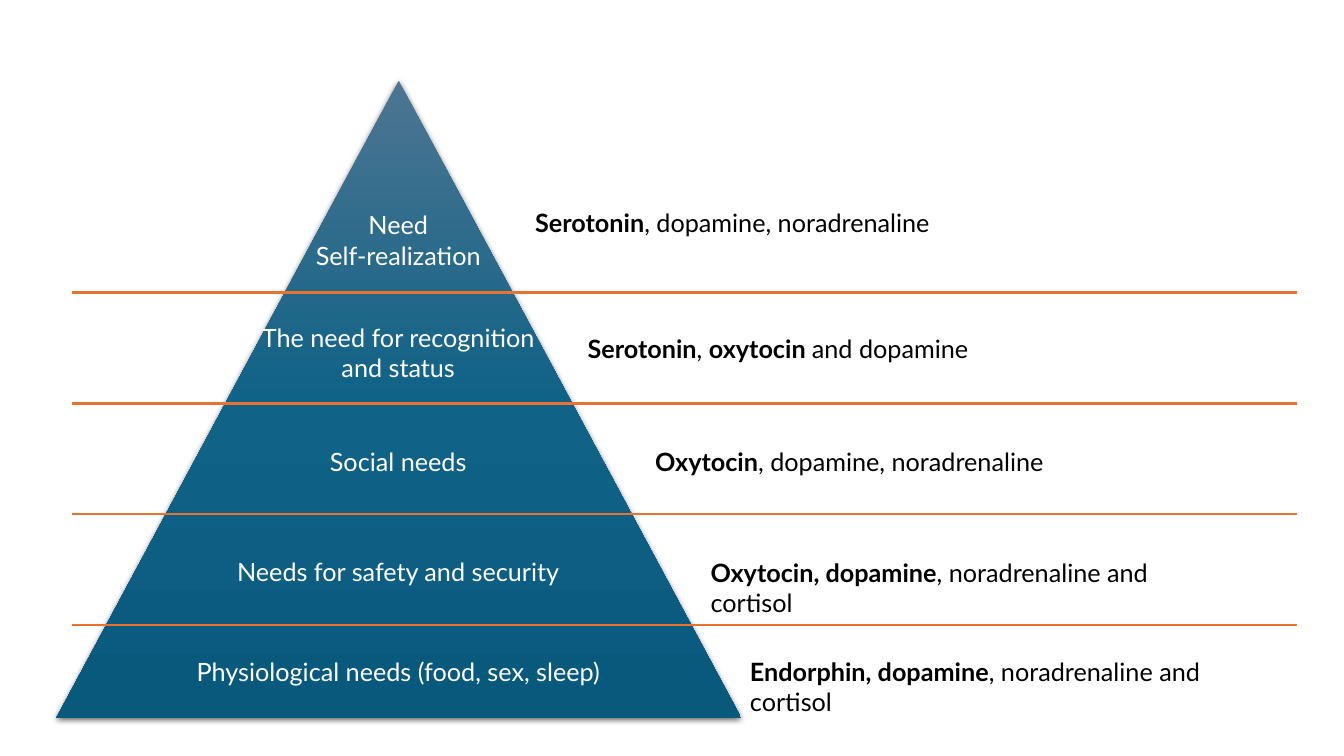
from copy import deepcopy
from dataclasses import dataclass

from lxml.etree import SubElement
from pptx import Presentation
from pptx.dml.color import RGBColor
from pptx.enum.shapes import MSO_CONNECTOR as Connector, MSO_SHAPE as Shape
from pptx.enum.text import MSO_AUTO_SIZE as AutoSize, PP_ALIGN as Align
from pptx.oxml.ns import qn
from pptx.util import Inches, Pt


@dataclass(frozen=True)
class Theme:
    font: str = "Lato"
    size: int = 18
    need: str = "FFFFFF"
    hormone: str = "000000"
    divider: str = "E97132"
    shadow: str = "000000"
    pyramid: tuple = ((0, "4C7591"), (0.5, "106287"), (1, "09597D"))


THEME = Theme()
PYRAMID_CENTER = 3.95
DIVIDER_LEFT, DIVIDER_RIGHT = 0.71, 12.86
DIVIDER_TOP, DIVIDER_STEP, DIVIDER_COUNT = 2.9, 1.1, 4

# Need lines, top, width, height
NEEDS = [
    (["Need", "Self-realization"], 2.03, 4.26, 0.71),
    (["The need for recognition", "and status"], 3.15, 4.26, 0.71),
    (["Social needs"], 4.38, 4.26, 0.4),
    (["Needs for safety and security"], 5.47, 4.26, 0.4),
    (["Physiological needs (food, sex, sleep)"], 6.46, 4.69, 0.4),
]

# Runs alternating bold and regular, left, top, width
HORMONES = [
    (["Serotonin", ", dopamine, noradrenaline"], 5.21, 2.01, 4.26),
    (["Serotonin", ", ", "oxytocin ", "and dopamine"], 5.73, 3.26, 4.26),
    (["Oxytocin", ", dopamine, noradrenaline"], 6.4, 4.38, 4.26),
    (["Oxytocin, dopamine", ", noradrenaline and cortisol"], 6.95, 5.48, 5.3),
    (["Endorphin, dopamine", ", noradrenaline and cortisol"], 7.34, 6.46, 5.34),
]


def add_soft_shadow(shape):
    shape.shadow.inherit = False
    effects = shape.element.spPr.find(qn("a:effectLst"))
    outer = SubElement(effects, qn("a:outerShdw"))
    settings = {"blurRad": Pt(4.5), "dist": Pt(1.5), "dir": 90 * 60000, "rotWithShape": 0}
    for name, value in settings.items():
        outer.set(name, str(value))
    color = SubElement(outer, qn("a:srgbClr"), val=THEME.shadow)
    SubElement(color, qn("a:alpha"), val="63000")


def add_pyramid(slide):
    pyramid = slide.shapes.add_shape(
        Shape.ISOSCELES_TRIANGLE, Inches(0.56), Inches(0.8), Inches(6.79), Inches(6.32))
    pyramid.line.fill.background()
    pyramid.fill.gradient()
    pyramid.fill.gradient_angle = 270
    # The default gradient has two stops; add the third
    stop_list = pyramid.element.spPr.find(qn("a:gradFill")).find(qn("a:gsLst"))
    stop_list.append(deepcopy(stop_list[-1]))
    for stop, (position, color) in zip(pyramid.fill.gradient_stops, THEME.pyramid):
        stop.position = position
        stop.color.rgb = RGBColor.from_string(color)
    add_soft_shadow(pyramid)


def add_divider(slide, top):
    divider = slide.shapes.add_connector(
        Connector.STRAIGHT, Inches(DIVIDER_LEFT), Inches(top), Inches(DIVIDER_RIGHT), Inches(top))
    divider.line.color.rgb = RGBColor.from_string(THEME.divider)
    divider.line.width = Pt(2)
    SubElement(divider.element.spPr, qn("a:effectLst"))


def add_label(slide, paragraphs, left, top, width, height, color, align):
    """Each paragraph is a list of (text, bold) runs."""
    frame = slide.shapes.add_textbox(
        Inches(left), Inches(top), Inches(width), Inches(height)).text_frame
    frame.word_wrap = True
    frame.auto_size = AutoSize.SHAPE_TO_FIT_TEXT
    for index, runs in enumerate(paragraphs):
        paragraph = frame.add_paragraph() if index else frame.paragraphs[0]
        paragraph.alignment = align
        for text, bold in runs:
            run = paragraph.add_run()
            run.text = text
            run.font.color.rgb = RGBColor.from_string(color)
            formats = {"name": THEME.font, "size": Pt(THEME.size), "bold": bold}
            for name, value in formats.items():
                setattr(run.font, name, value)


def main():
    deck = Presentation()
    deck.slide_width, deck.slide_height = Inches(13.33), Inches(7.5)
    slide = deck.slides.add_slide(deck.slide_layouts[6])

    # Pyramid and the lines between its levels
    add_pyramid(slide)
    for level in range(DIVIDER_COUNT):
        add_divider(slide, DIVIDER_TOP + level * DIVIDER_STEP)

    # Needs, centred on the pyramid
    for lines, top, width, height in NEEDS:
        paragraphs = [[(line, False)] for line in lines]
        add_label(slide, paragraphs, PYRAMID_CENTER - width / 2, top, width, height,
                  THEME.need, Align.CENTER)

    # Hormones beside each level
    for texts, left, top, width in HORMONES:
        runs = [(text, index % 2 == 0) for index, text in enumerate(texts)]
        add_label(slide, [runs], left, top, width, 0.4, THEME.hormone, Align.LEFT)

    deck.save("out.pptx")


if __name__ == "__main__":
    main()
